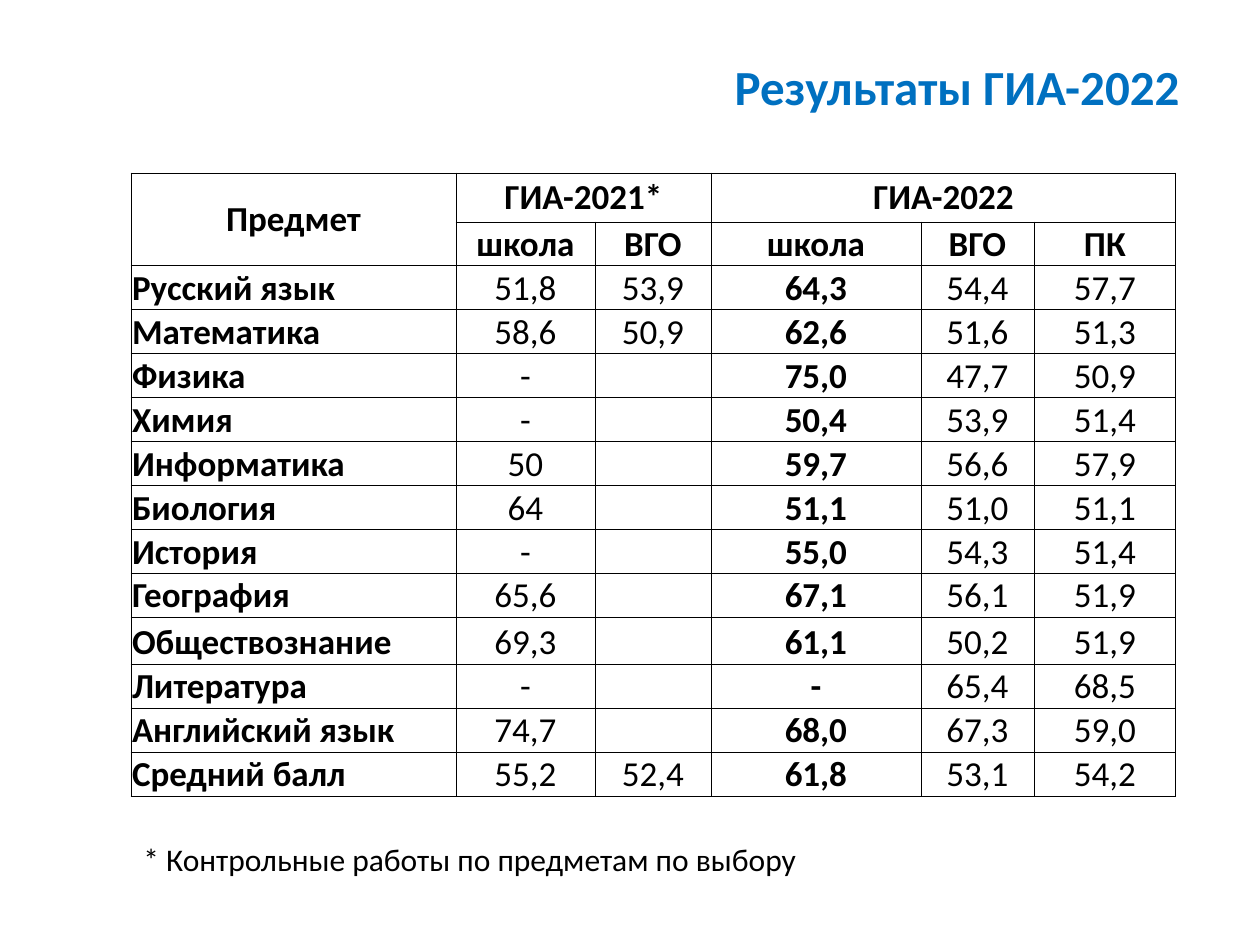
from lxml.etree import SubElement
from pptx import Presentation
from pptx.dml.color import RGBColor
from pptx.enum.text import MSO_ANCHOR, MSO_AUTO_SIZE, PP_ALIGN
from pptx.oxml.ns import qn
from pptx.util import Emu, Pt

PX_PER_INCH = 126
FONT = "Calibri"
BLACK = "000000"
TITLE_BLUE = "0070C0"

COLUMN_WIDTHS = [325, 139, 116, 210, 113, 142]
ROW_HEIGHT = 44
SPECIAL_ROW_HEIGHTS = {0: 49, 1: 43, 10: 47}
SCHOOL_2022_COLUMN = 3
HEADER_ROWS = [
    ["Предмет", "ГИА-2021*", "", "ГИА-2022", "", ""],
    ["", "школа", "ВГО", "школа", "ВГО", "ПК"],
]
HEADER_SPANS = [((0, 0), (1, 0)), ((0, 1), (0, 2)), ((0, 3), (0, 5))]
RESULT_ROWS = [
    ["Русский язык", "51,8", "53,9", "64,3", "54,4", "57,7"],
    ["Математика", "58,6", "50,9", "62,6", "51,6", "51,3"],
    ["Физика", "-", "", "75,0", "47,7", "50,9"],
    ["Химия", "-", "", "50,4", "53,9", "51,4"],
    ["Информатика", "50", "", "59,7", "56,6", "57,9"],
    ["Биология", "64", "", "51,1", "51,0", "51,1"],
    ["История", "-", "", "55,0", "54,3", "51,4"],
    ["География", "65,6", "", "67,1", "56,1", "51,9"],
    ["Обществознание", "69,3", "", "61,1", "50,2", "51,9"],
    ["Литература", "-", "", "-", "65,4", "68,5"],
    ["Английский язык", "74,7", "", "68,0", "67,3", "59,0"],
    ["Средний балл", "55,2", "52,4", "61,8", "53,1", "54,2"],
]


def px(length):
    return Emu(round(length * 914400 / PX_PER_INCH))


def color(hex_string):
    return RGBColor.from_string(hex_string)


def add_run(paragraph, text, size, hex_color=BLACK, bold=False):
    run = paragraph.add_run()
    run.text = text
    run.font.name = FONT
    run.font.size = Pt(size)
    run.font.bold = bold
    run.font.color.rgb = color(hex_color)


def add_borders(cell, hex_color=BLACK, width=0.5):
    properties = cell._tc.get_or_add_tcPr()
    for side in ("a:lnL", "a:lnR", "a:lnT", "a:lnB"):
        line = SubElement(properties, qn(side), w=str(Pt(width)))
        fill = SubElement(line, qn("a:solidFill"))
        SubElement(fill, qn("a:srgbClr"), val=hex_color)


def format_cell(cell, text, bold, alignment, anchor):
    add_borders(cell)
    cell.fill.background()
    cell.margin_left = cell.margin_right = cell.margin_top = px(1)
    cell.margin_bottom = 0
    cell.vertical_anchor = anchor
    paragraph = cell.text_frame.paragraphs[0]
    paragraph.alignment = alignment
    if text:
        add_run(paragraph, text, 20, bold=bold)


def place_title(slide, left, top, width, height):
    title = slide.shapes.title
    title.left, title.top, title.width, title.height = map(px, (left, top, width, height))
    title.text_frame.vertical_anchor = MSO_ANCHOR.MIDDLE
    paragraph = title.text_frame.paragraphs[0]
    paragraph.alignment = PP_ALIGN.RIGHT
    paragraph.line_spacing = 0.9
    add_run(paragraph, "Результаты ГИА-2022", 28, TITLE_BLUE, bold=True)


def add_results_table(slide, left, top):
    rows = HEADER_ROWS + RESULT_ROWS
    heights = [SPECIAL_ROW_HEIGHTS.get(index, ROW_HEIGHT) for index in range(len(rows))]
    table = slide.shapes.add_table(
        len(rows), len(COLUMN_WIDTHS),
        px(left), px(top), px(sum(COLUMN_WIDTHS)), px(sum(heights)),
    ).table
    table.first_row = table.horz_banding = False
    for column, width in zip(table.columns, COLUMN_WIDTHS):
        column.width = px(width)
    for row, height in zip(table.rows, heights):
        row.height = px(height)
    for row_index, texts in enumerate(rows):
        is_header = row_index < len(HEADER_ROWS)
        anchor = MSO_ANCHOR.MIDDLE if is_header else MSO_ANCHOR.BOTTOM
        for column_index, text in enumerate(texts):
            is_subject = column_index == 0 and not is_header
            bold = is_header or is_subject or column_index == SCHOOL_2022_COLUMN
            alignment = PP_ALIGN.LEFT if is_subject else PP_ALIGN.CENTER
            format_cell(table.cell(row_index, column_index), text, bold, alignment, anchor)
    for first, last in HEADER_SPANS:
        table.cell(*first).merge(table.cell(*last))


def add_footnote(slide, left, top, width, height):
    text_frame = slide.shapes.add_textbox(*map(px, (left, top, width, height))).text_frame
    text_frame.word_wrap = True
    text_frame.auto_size = MSO_AUTO_SIZE.SHAPE_TO_FIT_TEXT
    add_run(text_frame.paragraphs[0], "* Контрольные работы по предметам по выбору", 18)


def main():
    presentation = Presentation()
    presentation.slide_width, presentation.slide_height = px(1260), px(945)
    slide = presentation.slides.add_slide(presentation.slide_layouts[5])
    place_title(slide, 341, 54, 851, 72)
    add_results_table(slide, 131, 173)
    add_footnote(slide, 131, 834, 804, 50)
    presentation.save("out.pptx")


if __name__ == "__main__":
    main()
